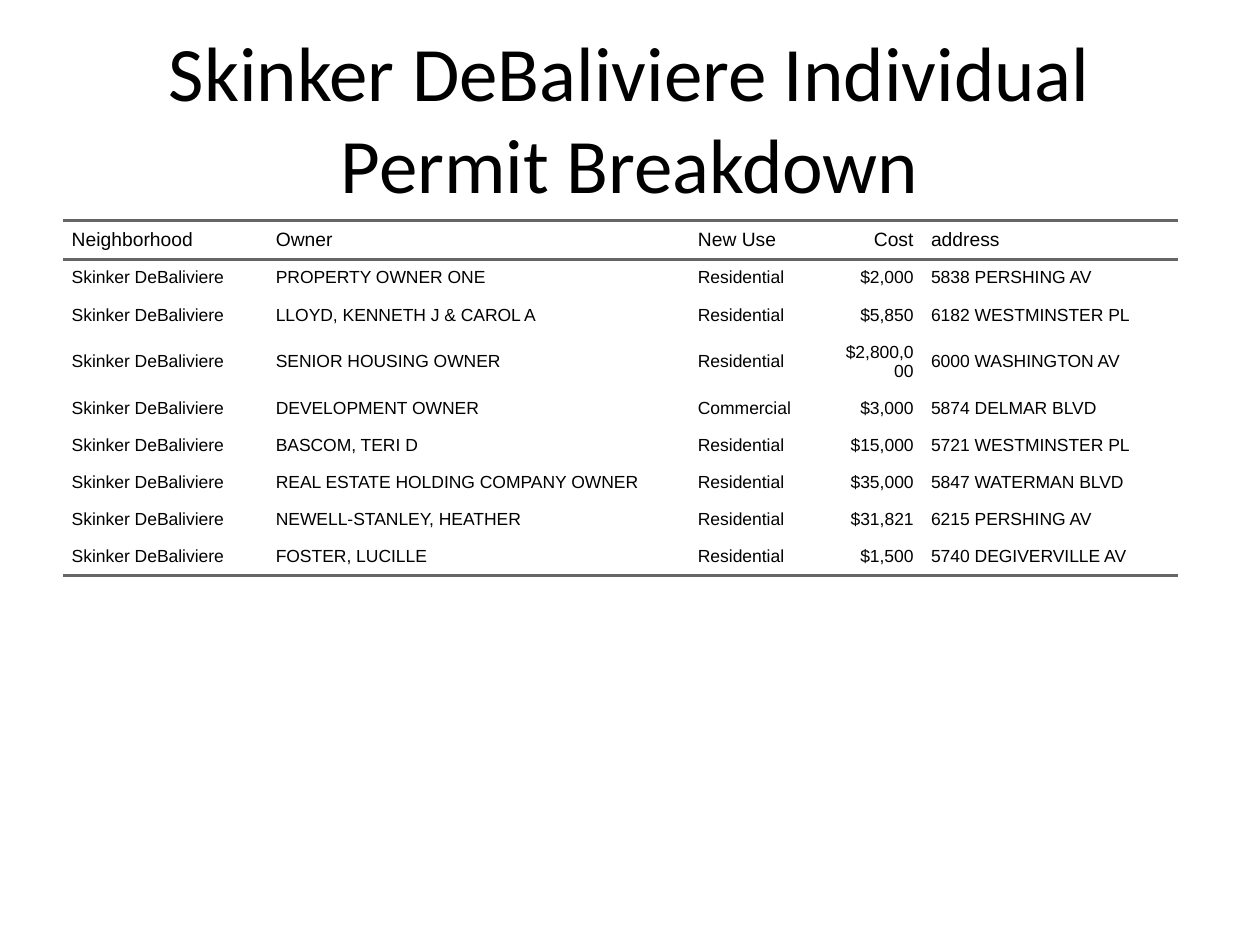
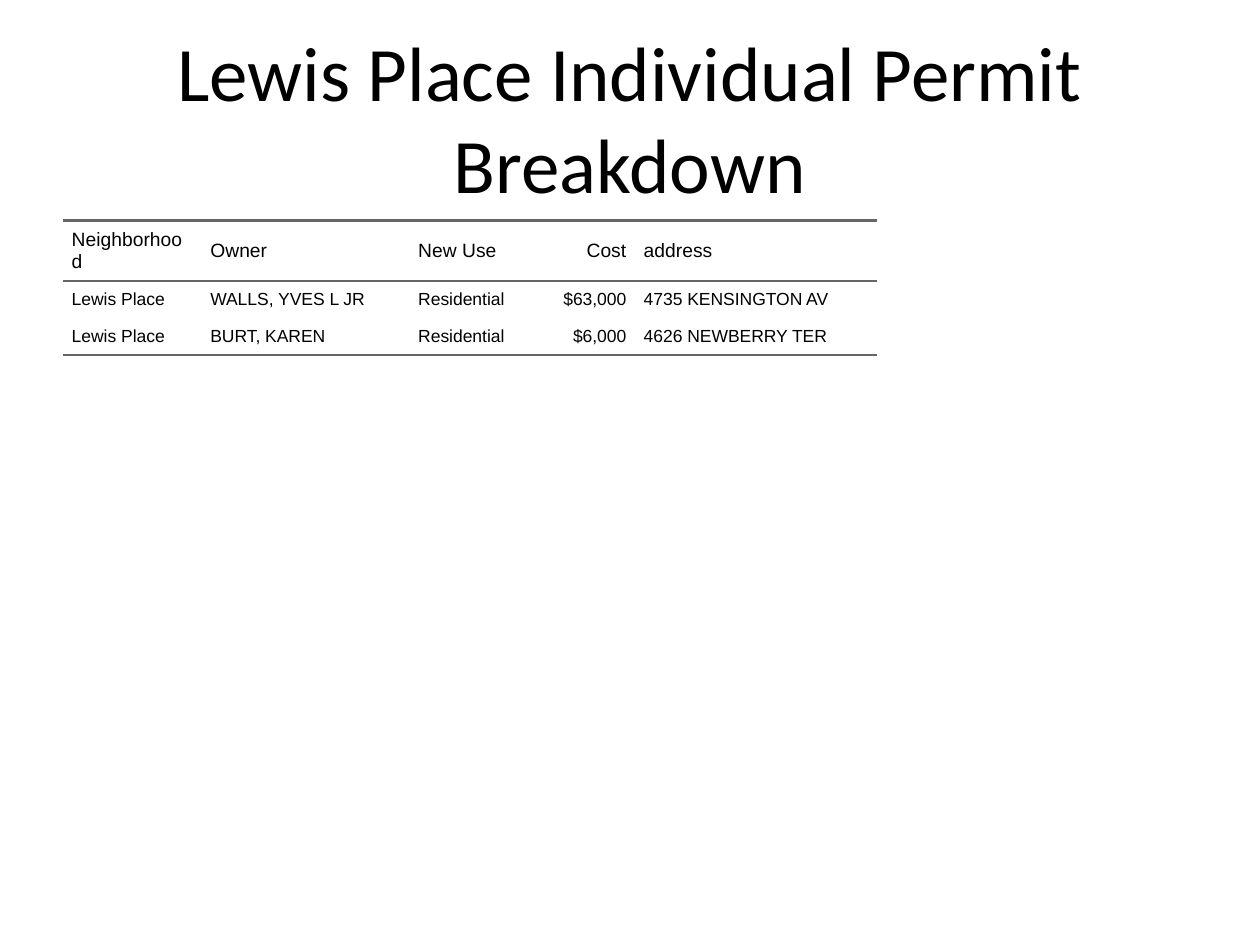
from dataclasses import dataclass

from lxml import etree
from pptx import Presentation
from pptx.dml.color import RGBColor
from pptx.enum.text import MSO_ANCHOR, MSO_AUTO_SIZE, PP_ALIGN
from pptx.oxml.ns import qn
from pptx.util import Pt

MIDDLE = MSO_ANCHOR.MIDDLE
NO_AUTOFIT = MSO_AUTO_SIZE.NONE
LEFT, CENTER, RIGHT = PP_ALIGN.LEFT, PP_ALIGN.CENTER, PP_ALIGN.RIGHT
TITLE_ONLY = 5
PLAIN_TABLE_STYLE = "{2D5ABB26-0587-4C30-8999-92F81FD0307C}"


@dataclass(frozen=True)
class Theme:
    """Colours, fonts and sizes shared by the slides."""

    ink: str = "000000"
    rule: str = "666666"
    rule_width: float = 1.5
    title_font: str = "Calibri"
    table_font: str = "Arial"
    title_size: float = 44
    header_size: float = 11
    body_size: float = 10
    cell_gap: float = 5
    row_height: float = 18


THEME = Theme()
SLIDE_SIZE = (720, 540)
TITLE_BOX = (36, 21.6, 648, 90)
TABLE_BOX = (36, 126, 648, 356.4)

HEADINGS = ("Neighborhood", "Owner", "New Use", "Cost", "address")
COST_COLUMN = HEADINGS.index("Cost")

BREAKDOWNS = (
    {
        "neighborhood": "Skinker DeBaliviere",
        "column_widths": (116.64, 241.2, 79.2, 54, 146.16),
        "permits": (
            ("PROPERTY OWNER ONE", "Residential", "$2,000", "5838 PERSHING AV"),
            ("LLOYD, KENNETH J & CAROL A", "Residential", "$5,850", "6182 WESTMINSTER PL"),
            ("SENIOR HOUSING OWNER", "Residential", "$2,800,000", "6000 WASHINGTON AV"),
            ("DEVELOPMENT OWNER", "Commercial", "$3,000", "5874 DELMAR BLVD"),
            ("BASCOM, TERI D", "Residential", "$15,000", "5721 WESTMINSTER PL"),
            ("REAL ESTATE HOLDING COMPANY OWNER", "Residential", "$35,000", "5847 WATERMAN BLVD"),
            ("NEWELL-STANLEY, HEATHER", "Residential", "$31,821", "6215 PERSHING AV"),
            ("FOSTER, LUCILLE", "Residential", "$1,500", "5740 DEGIVERVILLE AV"),
        ),
    },
    {
        "neighborhood": "Lewis Place",
        "column_widths": (79.2, 118.8, 74.88, 54, 138.24),
        "permits": (
            ("WALLS, YVES L JR", "Residential", "$63,000", "4735 KENSINGTON AV"),
            ("BURT, KAREN", "Residential", "$6,000", "4626 NEWBERRY TER"),
        ),
    },
)


def apply_format(target, values):
    """Set each named attribute of the target."""
    for name, value in values.items():
        setattr(target, name, value)


def place(target, box):
    """Move and size the target to a box in points."""
    apply_format(target, dict(zip(("left", "top", "width", "height"), map(Pt, box))))


def style_font(font, family, size):
    """Give a font its family, size and the ink colour."""
    apply_format(font, {"name": family, "size": Pt(size), "bold": False})
    font.color.rgb = RGBColor.from_string(THEME.ink)


def add_title(slide, text, box):
    """Format the title placeholder inside the box."""
    title = slide.shapes.title
    place(title, box)
    frame = title.text_frame
    apply_format(frame, {"text": text, "word_wrap": True, "auto_size": NO_AUTOFIT,
                         "vertical_anchor": MIDDLE})
    heading = frame.paragraphs[0]
    heading.alignment = CENTER
    style_font(heading.runs[0].font, THEME.title_font, THEME.title_size)


def rule_cell(cell, edges):
    """Draw a rule on the given edges of a cell."""
    properties = cell._tc.get_or_add_tcPr()
    for edge in edges:
        line = etree.SubElement(properties, qn(f"a:ln{edge}"), w=str(Pt(THEME.rule_width)))
        fill = etree.SubElement(line, qn("a:solidFill"))
        etree.SubElement(fill, qn("a:srgbClr"), val=THEME.rule)


def fill_cell(cell, text, size, alignment, edges):
    """Write one table cell with its spacing and rules."""
    gap = Pt(THEME.cell_gap)
    rule_cell(cell, edges)
    cell.fill.background()
    apply_format(cell, {"text": text, "vertical_anchor": MIDDLE, "margin_left": 0,
                        "margin_right": 0, "margin_top": gap, "margin_bottom": gap})
    paragraph = cell.text_frame.paragraphs[0]
    apply_format(paragraph, {"alignment": alignment, "space_before": gap, "space_after": gap})
    indents = paragraph._p.get_or_add_pPr()
    for name, value in {"marL": gap, "marR": gap, "indent": 0}.items():
        indents.set(name, str(value))
    style_font(paragraph.runs[0].font, THEME.table_font, size)


def add_permit_table(slide, rows, column_widths, box):
    """Add the permit table, ruled around its header and at its foot."""
    frame = slide.shapes.add_table(len(rows), len(HEADINGS), *map(Pt, box))
    table = frame.table
    apply_format(table, {"first_row": False, "horz_banding": False})
    table._tbl.tblPr.find(qn("a:tableStyleId")).text = PLAIN_TABLE_STYLE
    for column, width in zip(table.columns, column_widths):
        column.width = Pt(width)
    for row_index, values in enumerate(rows):
        table.rows[row_index].height = Pt(THEME.row_height)
        is_header = row_index == 0
        size = THEME.header_size if is_header else THEME.body_size
        edges = "TB" if is_header else "B" if row_index == len(rows) - 1 else ""
        for column_index, value in enumerate(values):
            alignment = RIGHT if column_index == COST_COLUMN else LEFT
            fill_cell(table.cell(row_index, column_index), value, size, alignment, edges)
    place(frame, box)


def add_breakdown_slide(deck, neighborhood, column_widths, permits):
    """Add the permit breakdown of one neighborhood."""
    slide = deck.slides.add_slide(deck.slide_layouts[TITLE_ONLY])
    add_title(slide, f"{neighborhood} Individual Permit Breakdown", TITLE_BOX)
    rows = [HEADINGS] + [(neighborhood, *permit) for permit in permits]
    add_permit_table(slide, rows, column_widths, TABLE_BOX)


def main():
    """Build and save the deck."""
    deck = Presentation()
    deck.slide_width, deck.slide_height = map(Pt, SLIDE_SIZE)
    for breakdown in BREAKDOWNS:
        add_breakdown_slide(deck, **breakdown)
    deck.save("out.pptx")


if __name__ == "__main__":
    main()
